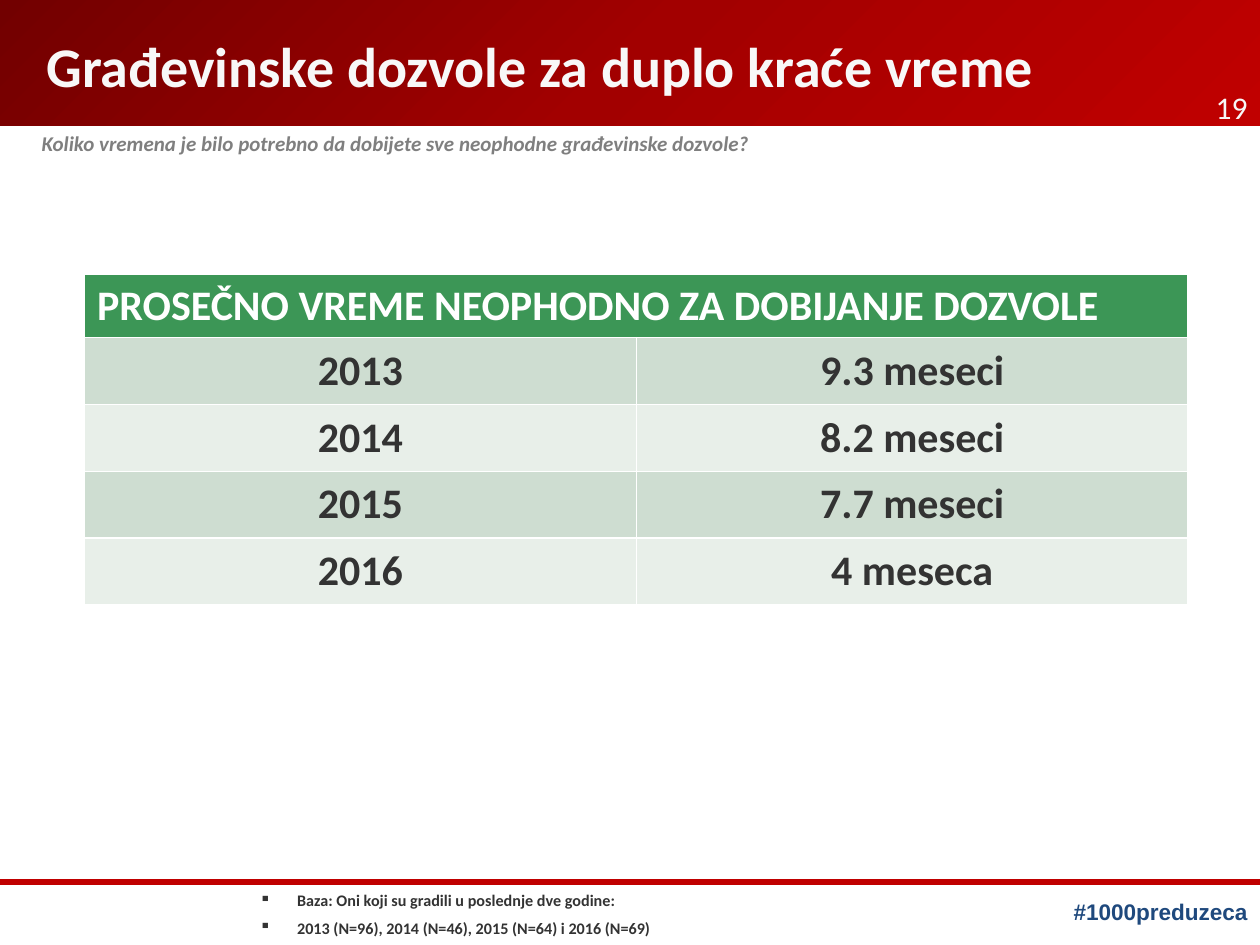
from dataclasses import dataclass

from lxml.etree import SubElement
from pptx import Presentation
from pptx.dml.color import RGBColor
from pptx.enum.shapes import MSO_CONNECTOR, MSO_SHAPE
from pptx.enum.text import MSO_ANCHOR, PP_ALIGN
from pptx.oxml import parse_xml
from pptx.oxml.ns import nsdecls, qn
from pptx.util import Inches, Pt

WIDE, HIGH = 10, 7.5
COLORS = {
    "dark": "720000", "mid": "A20000", "red": "C00000",
    "pale": "F8F8F8", "gray": "7F7F7F", "ink": "333333", "navy": "1F497D",
    "white": "FFFFFF", "green": "3C9656", "odd": "CEDDD1", "even": "E8EFE9",
}
HEAD = "PROSEČNO VREME NEOPHODNO ZA DOBIJANJE DOZVOLE"
TIMES = [("2013", "9.3 meseci"), ("2014", "8.2 meseci"),
         ("2015", "7.7 meseci"), ("2016", "4 meseca")]


@dataclass
class Label:
    lines: list[str]
    box: tuple[float, float, float, float]
    size: float
    color: str
    align: PP_ALIGN = PP_ALIGN.LEFT
    font: str = "Calibri"
    bold: bool = True
    italic: bool = False
    anchor: MSO_ANCHOR = MSO_ANCHOR.TOP
    inset: bool = True
    wrap: bool = True
    spacing: float = 1
    before: float = 0
    bullet: str = ""


LABELS = [
    Label(["#1000preduzeca"], (8.42, 7.08, 1.58, 0.32), 12.9, "navy",
          PP_ALIGN.CENTER, font="Arial", wrap=False),
    Label(["19"], (9.43, 0.65, 0.57, 0.32), 18, "pale", PP_ALIGN.RIGHT,
          bold=False),
    Label(["Građevinske dozvole za duplo kraće vreme"],
          (0.27, 0.15, 9.15, 0.83), 32, "pale", PP_ALIGN.JUSTIFY,
          anchor=MSO_ANCHOR.MIDDLE, spacing=0.8),
    Label(["Koliko vremena je bilo potrebno da dobijete sve neophodne "
           "građevinske dozvole?"],
          (0.33, 1.06, 8.73, 0.18), 12, "gray", italic=True, inset=False,
          spacing=0.9, before=4.1),
    Label(["Baza: Oni koji su gradili u poslednje dve godine:",
           "2013 (N=96), 2014 (N=46), 2015 (N=64) i 2016 (N=69)"],
          (1.96, 7.02, 5.95, 0.46), 9.2, "ink", before=4.6, bullet="▪"),
]


def rgb(name: str) -> RGBColor:
    return RGBColor.from_string(COLORS[name])


def style(para, size: float, color: str, font: str = "Calibri",
          bold: bool = True, italic: bool = False) -> None:
    face = para.font
    face.name, face.size = font, Pt(size)
    face.bold, face.italic = bold, italic
    face.color.rgb = rgb(color)


def add_bullet(para, mark: str) -> None:
    props = para._p.get_or_add_pPr()
    props.set("marL", str(Inches(0.3)))
    props.set("indent", str(-Inches(0.3)))
    SubElement(props, qn("a:buChar")).set("char", mark)
    # The bullet has to precede the default run properties.
    props.append(props.find(qn("a:defRPr")))


def add_label(slide, label: Label) -> None:
    frame = slide.shapes.add_textbox(*map(Inches, label.box)).text_frame
    frame.word_wrap = label.wrap
    frame.vertical_anchor = label.anchor
    if not label.inset:
        frame.margin_left = frame.margin_right = 0
        frame.margin_top = frame.margin_bottom = 0
    frame.text = "\n".join(label.lines)
    for para in frame.paragraphs:
        para.alignment = label.align
        para.line_spacing = label.spacing
        para.space_before = Pt(label.before)
        style(para, label.size, label.color, label.font, label.bold,
              label.italic)
        if label.bullet:
            add_bullet(para, label.bullet)


def add_band(slide) -> None:
    """Draw the title band with its radial gradient."""
    band = slide.shapes.add_shape(MSO_SHAPE.RECTANGLE, 0, 0, Inches(WIDE),
                                  Inches(1))
    band.shadow.inherit = False
    band.line.fill.background()
    stops = "".join(
        f'<a:gs pos="{pos * 1000}"><a:srgbClr val="{COLORS[name]}"/></a:gs>'
        for pos, name in [(0, "dark"), (50, "mid"), (100, "red")])
    band._element.spPr.find(qn("a:prstGeom")).addnext(parse_xml(
        f'<a:gradFill {nsdecls("a")}><a:gsLst>{stops}</a:gsLst>'
        '<a:path path="circle"><a:fillToRect r="100000" b="100000"/></a:path>'
        '</a:gradFill>'))


def add_rule(slide, top: float) -> None:
    rule = slide.shapes.add_connector(MSO_CONNECTOR.STRAIGHT, 0, Inches(top),
                                      Inches(WIDE), Inches(top))
    rule.line.color.rgb = rgb("red")
    rule.line.width = Pt(3)
    SubElement(rule._element.spPr, qn("a:effectLst"))


def fill_cell(cell, text: str, fill: str, color: str) -> None:
    cell.fill.solid()
    cell.fill.fore_color.rgb = rgb(fill)
    cell.text = text
    style(cell.text_frame.paragraphs[0], 24, color)


def add_times(slide) -> None:
    grid = slide.shapes.add_table(
        len(TIMES) + 1, 2, Inches(0.67), Inches(2.18), Inches(8.76),
        Inches(2.62)).table
    for num, row in enumerate(grid.rows):
        row.height = Inches(0.53 if num else 0.48)
    grid.cell(0, 0).merge(grid.cell(0, 1))
    fill_cell(grid.cell(0, 0), HEAD, "green", "white")
    for num, pair in enumerate(TIMES, 1):
        for col, text in enumerate(pair):
            cell = grid.cell(num, col)
            fill_cell(cell, text, "odd" if num % 2 else "even", "ink")
            cell.vertical_anchor = MSO_ANCHOR.MIDDLE
            cell.text_frame.paragraphs[0].alignment = PP_ALIGN.CENTER


def main() -> None:
    deck = Presentation()
    deck.slide_width, deck.slide_height = Inches(WIDE), Inches(HIGH)
    slide = deck.slides.add_slide(deck.slide_layouts[6])
    add_band(slide)
    add_rule(slide, 7)
    for label in LABELS:
        add_label(slide, label)
    add_times(slide)
    deck.save("out.pptx")


if __name__ == "__main__":
    main()
